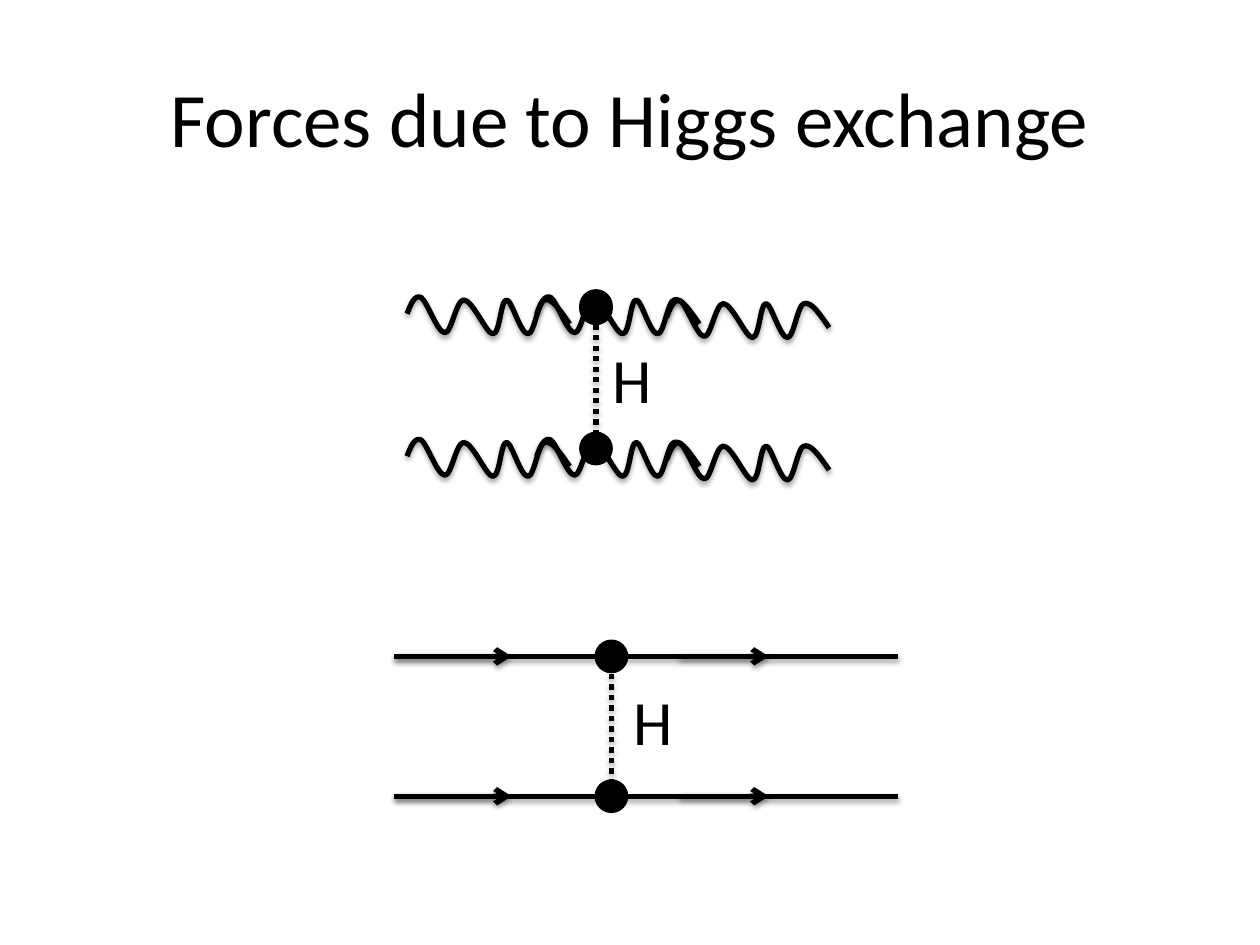
import pptx
import pptx.dml.color
import pptx.enum.dml
import pptx.enum.shapes
import pptx.enum.text
import pptx.oxml
import pptx.oxml.ns
import pptx.util
from lxml import etree

Pt = pptx.util.Pt
qn = pptx.oxml.ns.qn
BLACK = pptx.dml.color.RGBColor(0, 0, 0)
WHITE = pptx.dml.color.RGBColor(255, 255, 255)

TITLE = ("Forces due to Higgs exchange", (36, 21.6, 648, 90), 44)
HIGGS_LABELS = [
    ("H", (342.7, 190.8, 37.4, 50.9), 36),
    ("H", (355, 386.6, 37.4, 50.9), 36),
]
HIGGS_LINES = [(340.6, 173.5, 259.2), (349.4, 373, 457.9)]

BOSON_TOPS = [0, 81.4]
WAVE_STARTS = [(232.6, 179.3), (306.7, 179.3), (380.9, 181.4)]
WAVE_CURVES = [
    [(2.2, -5.8), (4.3, -10.8), (7.9, -9.4)],
    [(11.5, -7.2), (17.3, 10.8), (21.6, 10.8)],
    [(25.2, 11.5), (28.1, -7.9), (32.4, -7.9)],
    [(37.4, -7.9), (45.4, 11.5), (49, 11.5)],
    [(53.3, 11.5), (53.3, -7.9), (56.9, -7.9)],
    [(59.8, -7.9), (64.8, 11.5), (69.1, 11.5)],
    [(72.7, 11.5), (74.9, -7.2), (78.5, -7.9)],
    [(82.8, -9.4), (87.8, -1.4), (92.9, 5.8)],
]

FERMION_HEIGHTS = [375.1, 455]
FERMION_PARTS = [(225.4, 513.4, False), (225.4, 292.3, True), (388.1, 439.2, True)]

VERTEX_SIZE = 17.3
VERTICES = [(340.6, 176.2), (340.6, 174.9), (340.6, 256.3), (349.4, 375.1), (349.4, 455)]


def add_text(slide, text, box, size, is_title=False):
    frame = slide.shapes.add_textbox(*map(Pt, box)).text_frame
    frame.word_wrap = is_title
    paragraph = frame.paragraphs[0]
    paragraph.text = text
    paragraph.font.name = "Calibri"
    paragraph.font.size = Pt(size)
    paragraph.font.color.rgb = BLACK
    if is_title:
        frame.vertical_anchor = pptx.enum.text.MSO_ANCHOR.MIDDLE
        paragraph.alignment = pptx.enum.text.PP_ALIGN.CENTER


def style_stroke(stroke):
    stroke.line.color.rgb = BLACK
    stroke.line.width = Pt(3)
    properties = stroke._element.spPr
    effects = etree.SubElement(properties, qn("a:effectLst"))
    shadow = etree.SubElement(
        effects, qn("a:outerShdw"), blurRad=str(Pt(3.1)), dist=str(Pt(1.8)),
        dir="5400000", rotWithShape="0")
    color = etree.SubElement(shadow, qn("a:srgbClr"), val=str(BLACK))
    etree.SubElement(color, qn("a:alpha"), val="35000")


def add_line(slide, x1, y1, x2, y2, dotted=False, arrow=False):
    line = slide.shapes.add_connector(
        pptx.enum.shapes.MSO_CONNECTOR.STRAIGHT, Pt(x1), Pt(y1), Pt(x2), Pt(y2))
    style_stroke(line)
    if dotted:
        line.line.dash_style = pptx.enum.dml.MSO_LINE.ROUND_DOT
    if arrow:
        etree.SubElement(line.line._get_or_add_ln(), qn("a:tailEnd"), type="arrow")


def add_wave(slide, x, y):
    points = [(Pt(x + dx), Pt(y + dy)) for curve in WAVE_CURVES for dx, dy in curve]
    builder = slide.shapes.build_freeform(Pt(x), Pt(y))
    builder.add_line_segments(points, close=False)
    wave = builder.convert_to_shape()
    wave.fill.background()
    segments = wave._element.findall(".//" + qn("a:lnTo"))
    for i in range(0, len(segments), 3):
        bezier = etree.Element(qn("a:cubicBezTo"))
        segments[i].addprevious(bezier)
        for segment in segments[i:i + 3]:
            bezier.append(segment[0])
            segment.getparent().remove(segment)
    style_stroke(wave)


def add_vertex(slide, x, y):
    half = VERTEX_SIZE / 2
    vertex = slide.shapes.add_shape(
        pptx.enum.shapes.MSO_SHAPE.OVAL, Pt(x - half), Pt(y - half),
        Pt(VERTEX_SIZE), Pt(VERTEX_SIZE))
    vertex.shadow.inherit = False
    vertex.fill.solid()
    vertex.fill.fore_color.rgb = BLACK
    vertex.line.color.rgb = BLACK
    vertex.line.width = Pt(2)


def main():
    deck = pptx.Presentation()
    deck.slide_width, deck.slide_height = Pt(720), Pt(540)
    slide = deck.slides.add_slide(deck.slide_layouts[6])
    slide.background.fill.solid()
    slide.background.fill.fore_color.rgb = WHITE

    add_text(slide, *TITLE, is_title=True)
    for x, top, bottom in HIGGS_LINES:
        add_line(slide, x, top, x, bottom, dotted=True)
    for top in BOSON_TOPS:
        for x, y in WAVE_STARTS:
            add_wave(slide, x, y + top)
    for y in FERMION_HEIGHTS:
        for start, end, arrow in FERMION_PARTS:
            add_line(slide, start, y, end, y, arrow=arrow)
    for x, y in VERTICES:
        add_vertex(slide, x, y)
    for label in HIGGS_LABELS:
        add_text(slide, *label)

    deck.save("out.pptx")


if __name__ == "__main__":
    main()
